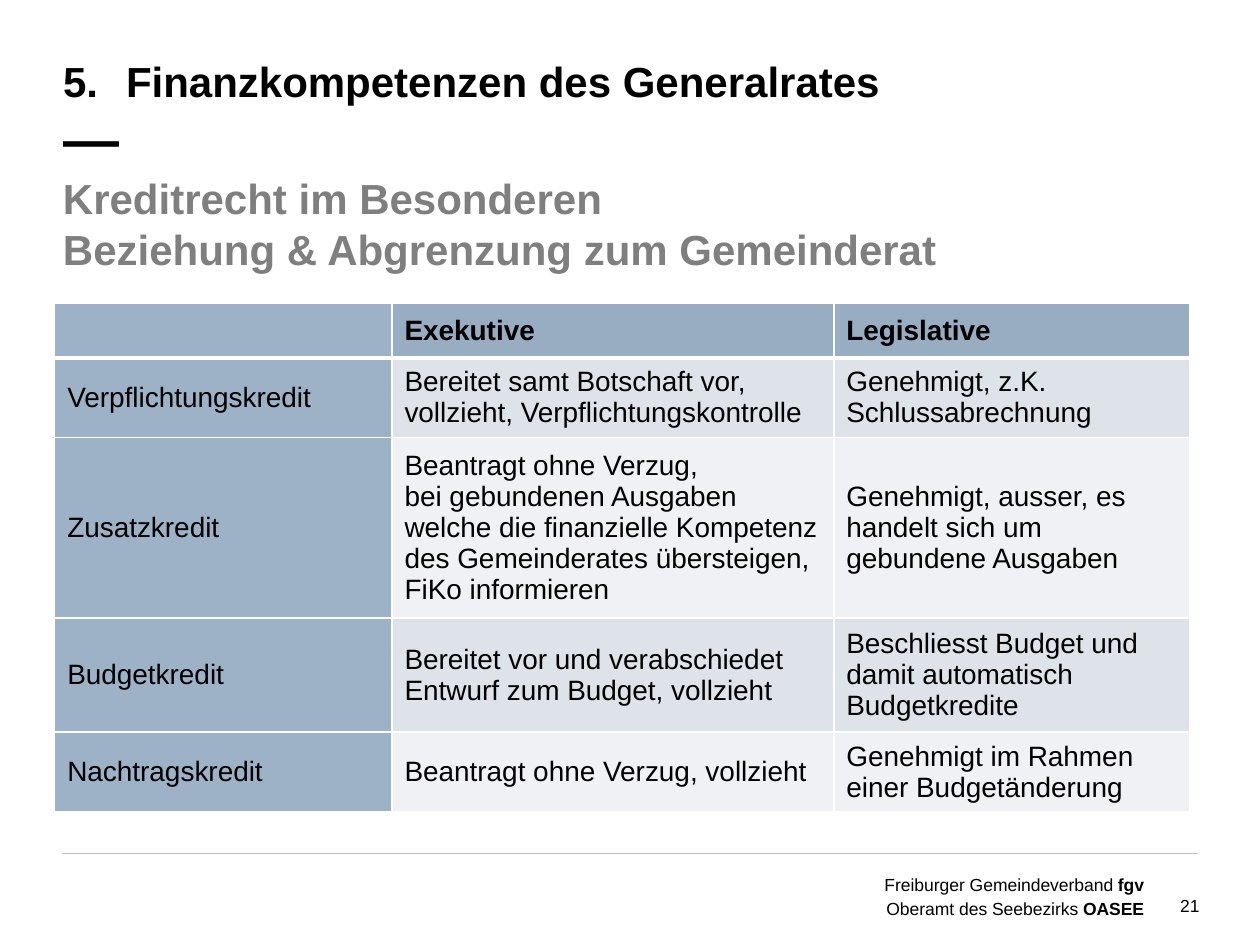
import pptx
import pptx.util
import pptx.dml.color
import pptx.enum.text
import pptx.oxml.ns
from lxml import etree

Pt = pptx.util.Pt
Align = pptx.enum.text.PP_ALIGN
Anchor = pptx.enum.text.MSO_ANCHOR
qn = pptx.oxml.ns.qn

HUES = {"text": "000000", "grey": "7F7F7F", "rule": "C0C0C0", "edge": "FFFFFF",
        "head": "98ADC2", "side": "9EB2C7", "odd": "DDE3E9", "even": "EFF1F4"}

TITLE = "5.\tFinanzkompetenzen des Generalrates"
SUB = "Kreditrecht im Besonderen\vBeziehung & Abgrenzung zum Gemeinderat"
OWNERS = [("Freiburger Gemeindeverband ", "fgv"),
          ("Oberamt des Seebezirks ", "OASEE")]
PAGE = "21"
ROWS = [
    ("", "Exekutive", "Legislative"),
    ("Verpflichtungskredit",
     "Bereitet samt Botschaft vor, vollzieht, Verpflichtungskontrolle",
     "Genehmigt, z.K. Schlussabrechnung"),
    ("Zusatzkredit",
     "Beantragt ohne Verzug, \vbei gebundenen Ausgaben welche die finanzielle "
     "Kompetenz des Gemeinderates übersteigen, FiKo informieren",
     "Genehmigt, ausser, es handelt sich um gebundene Ausgaben"),
    ("Budgetkredit",
     "Bereitet vor und verabschiedet Entwurf zum Budget, vollzieht",
     "Beschliesst Budget und damit automatisch Budgetkredite"),
    ("Nachtragskredit",
     "Beantragt ohne Verzug, vollzieht",
     "Genehmigt im Rahmen einer Budgetänderung"),
]
WIDTHS = [192.75, 252.5, 203.5]
HEIGHTS = [31, 45.5, 103, 65, 45.5]


def color(name):
    return pptx.dml.color.RGBColor.from_string(HUES[name])


def style(para, size, bold=False, hue="text", align=Align.LEFT):
    para.alignment = align
    font = para.font
    font.name, font.size, font.bold = "Arial", Pt(size), bold
    font.color.rgb = color(hue)


def frame(shape, left, top, width, height):
    """Place a shape and return its text frame, wrapped and without margins."""
    shape.left, shape.top = Pt(left), Pt(top)
    shape.width, shape.height = Pt(width), Pt(height)
    body = shape.text_frame
    body.word_wrap = True
    body.vertical_anchor = Anchor.TOP
    body.margin_left = body.margin_right = 0
    body.margin_top = body.margin_bottom = 0
    return body


def box(slide, *place):
    return frame(slide.shapes.add_textbox(0, 0, 0, 0), *place)


def edge(cell, side, width):
    line = etree.SubElement(cell._tc.get_or_add_tcPr(), qn("a:ln" + side),
                            w=str(Pt(width)))
    fill = etree.SubElement(line, qn("a:solidFill"))
    etree.SubElement(fill, qn("a:srgbClr"), val=HUES["edge"])


def add_title(slide):
    body = frame(slide.shapes.title, 36, 23.75, 648.75, 75)
    para = body.paragraphs[0]
    para.line_spacing = Pt(37)
    tabs = etree.SubElement(para._p.get_or_add_pPr(), qn("a:tabLst"))
    etree.SubElement(tabs, qn("a:tab"), pos=str(Pt(36)), algn="l")
    style(para, 24, True)
    para.add_run().text = TITLE
    para.add_line_break()
    dash = para.add_run()
    dash.text = "—"
    dash.font.size = Pt(32)


def add_sub(slide):
    para = box(slide, 36, 98.75, 648.75, 58).paragraphs[0]
    para.text = SUB
    para.space_after = Pt(6)
    style(para, 24, True, "grey")


def add_grid(slide):
    grid = slide.shapes.add_table(len(ROWS), len(WIDTHS), Pt(31.25), Pt(173.5),
                                  Pt(sum(WIDTHS)), Pt(sum(HEIGHTS))).table
    for col, width in zip(grid.columns, WIDTHS):
        col.width = Pt(width)
    for i, (texts, height) in enumerate(zip(ROWS, HEIGHTS)):
        grid.rows[i].height = Pt(height)
        band = "head" if i == 0 else "odd" if i % 2 else "even"
        for j, text in enumerate(texts):
            cell = grid.cell(i, j)
            for side in "LRTB":
                thick = (i, side) in [(0, "B"), (1, "T")]
                edge(cell, side, 3 if thick else 1)
            cell.fill.solid()
            cell.fill.fore_color.rgb = color("side" if j == 0 else band)
            cell.vertical_anchor = Anchor.MIDDLE
            para = cell.text_frame.paragraphs[0]
            para.text = text
            style(para, 16, i == 0)


def add_foot(slide):
    rule = slide.shapes.add_connector(1, Pt(35.5), Pt(487.5), Pt(684.75), Pt(487.5))
    rule.line.color.rgb = color("rule")
    rule.line.width = Pt(0.25)
    etree.SubElement(rule._element.spPr, qn("a:effectLst"))

    body = box(slide, 497.5, 498.25, 156.25, 25.5)
    for i, (text, mark) in enumerate(OWNERS):
        para = body.add_paragraph() if i else body.paragraphs[0]
        para.line_spacing = Pt(13.4)
        style(para, 10, align=Align.RIGHT)
        para.add_run().text = text
        run = para.add_run()
        run.text = mark
        run.font.bold = True

    para = box(slide, 653.75, 511.25, 31.75, 12.25).paragraphs[0]
    para.text = PAGE
    style(para, 10, align=Align.RIGHT)


def main():
    deck = pptx.Presentation()
    deck.slide_width, deck.slide_height = Pt(720), Pt(540)
    slide = deck.slides.add_slide(deck.slide_layouts[5])
    add_foot(slide)
    add_title(slide)
    add_sub(slide)
    add_grid(slide)
    deck.save("out.pptx")


if __name__ == "__main__":
    main()
